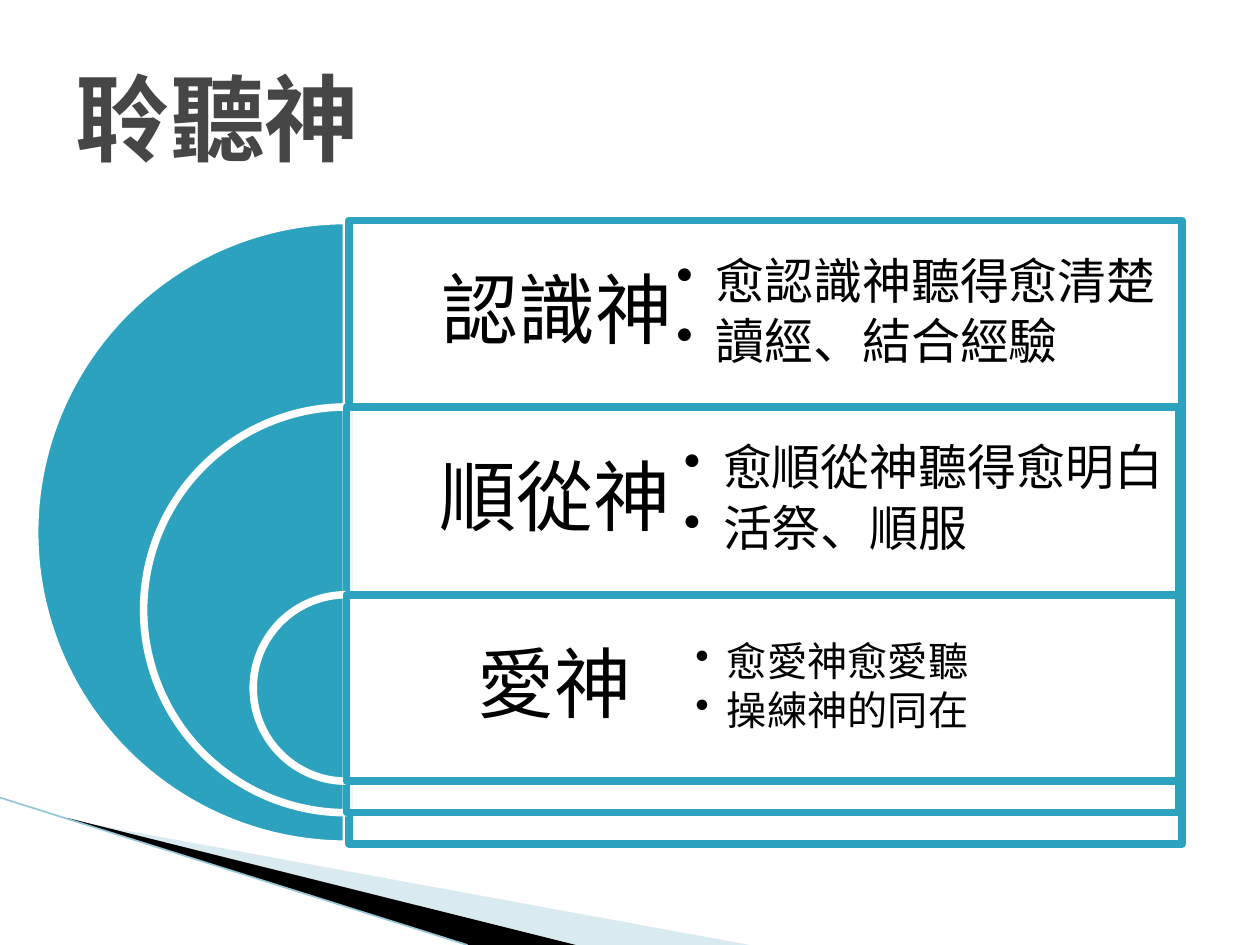
from lxml import etree
from pptx import Presentation
from pptx.dml.color import RGBColor
from pptx.enum.shapes import MSO_CONNECTOR, MSO_SHAPE
from pptx.enum.text import MSO_ANCHOR, PP_ALIGN
from pptx.oxml.ns import qn
from pptx.util import Pt

PX = 9144
FONT = "Roboto"
TEAL, WHITE, BLACK, GRAY = "2DA2BF", "FFFFFF", "000000", "464646"
PIE, RECTANGLE = MSO_SHAPE.PIE, MSO_SHAPE.RECTANGLE
STRAIGHT = MSO_CONNECTOR.STRAIGHT
MIDDLE = MSO_ANCHOR.MIDDLE
LEFT, CENTER = PP_ALIGN.LEFT, PP_ALIGN.CENTER
ROW_HEIGHT = 148
PIE_CENTER = 275

LEVELS = [
    {"box": (277, 175, 661, 495), "label": "認識神", "bullet_left": 527,
     "bullet_width": 487, "size": 28, "indent": 31,
     "bullets": ["愈認識神聽得愈清楚", "讀經、結合經驗"]},
    {"box": (275, 323, 661, 322), "label": "順從神", "bullet_left": 533,
     "bullet_width": 475, "size": 28, "indent": 31,
     "bullets": ["愈順從神聽得愈明白", "活祭、順服"]},
    {"box": (275, 472, 661, 148), "label": "愛神", "bullet_left": 542,
     "bullet_width": 458, "size": 23, "indent": 25,
     "bullets": ["愈愛神愈愛聽", "操練神的同在"]},
]


def px(*lengths):
    return [round(length * PX) for length in lengths]


def color(value):
    return RGBColor.from_string(value)


def paint(shape, fill, opacity=100, line=None, width=4.33):
    shape.shadow.inherit = False
    shape.fill.solid()
    shape.fill.fore_color.rgb = color(fill)
    if opacity < 100:
        fill_color = shape.fill._xPr.find(qn("a:solidFill"))[0]
        etree.SubElement(fill_color, qn("a:alpha"), val=str(opacity * 1000))
    if line:
        shape.line.color.rgb = color(line)
        shape.line.width = Pt(width)
    else:
        shape.line.fill.background()


def add_run(paragraph, text, size, text_color, bold=False):
    run = paragraph.add_run()
    run.text = text
    run.font.name = FONT
    run.font.size = Pt(size)
    run.font.bold = bold
    run.font.color.rgb = color(text_color)


def add_text(slide, box, lines, size, inset, space_share, alignment, indent=0):
    frame = slide.shapes.add_textbox(*px(*box)).text_frame
    frame.word_wrap = True
    frame.vertical_anchor = MIDDLE
    frame.margin_left, frame.margin_top, frame.margin_right, frame.margin_bottom = px(*[inset] * 4)
    for index, text in enumerate(lines):
        paragraph = frame.add_paragraph() if index else frame.paragraphs[0]
        if indent:
            properties = paragraph._p.get_or_add_pPr()
            hanging = indent * PX
            properties.set("marL", str(hanging))
            properties.set("indent", str(-hanging))
            etree.SubElement(properties, qn("a:buChar"), char="•")
        paragraph.alignment = alignment
        paragraph.line_spacing = 0.9
        paragraph.space_after = Pt(size * space_share)
        add_run(paragraph, text, size, BLACK)


def add_wedge(slide, points, fill, opacity=100):
    corners = [px(*point) for point in points]
    builder = slide.shapes.build_freeform(*corners[0])
    builder.add_line_segments(corners[1:])
    paint(builder.convert_to_shape(), fill, opacity)


def add_corner_decoration(slide, left, top, right, bottom):
    add_wedge(slide, [(left + 55, top + 18), (right, bottom),
                      (left + 456, bottom), (left + 55, top + 17)], "A0CBDC", 40)
    add_wedge(slide, [(left + 53, top + 16), (left + 457, bottom),
                      (left + 372, bottom), (left + 54, top + 17)], BLACK)
    edge = slide.shapes.add_connector(STRAIGHT, *px(left, top, left + 371, bottom))
    edge.line.color.rgb = color("97C5D8")
    edge.line.width = Pt(0.95)
    etree.SubElement(edge._element.spPr, qn("a:effectLst"))


def add_level(slide, level):
    left, top, width, height = level["box"]
    pie = slide.shapes.add_shape(PIE, *px(PIE_CENTER - height / 2, top, height, height))
    pie.adjustments[0] = 54
    pie.adjustments[1] = 162
    paint(pie, TEAL, line=WHITE)
    band = slide.shapes.add_shape(RECTANGLE, *px(left, top, width, height))
    paint(band, WHITE, 90, TEAL)
    add_text(slide, (left, top, width / 2, ROW_HEIGHT), [level["label"]],
             44, 18, 0.35, CENTER)
    add_text(slide, (level["bullet_left"], top, level["bullet_width"], ROW_HEIGHT),
             level["bullets"], level["size"], 10, 0.15, LEFT, level["indent"])


def add_title(slide, box, text):
    title = slide.shapes.title
    title.left, title.top, title.width, title.height = px(*box)
    title.text_frame.vertical_anchor = MIDDLE
    paragraph = title.text_frame.paragraphs[0]
    paragraph.alignment = LEFT
    add_run(paragraph, text, 54, GRAY, True)


def main():
    presentation = Presentation()
    presentation.slide_width, presentation.slide_height = px(1000, 750)
    slide = presentation.slides.add_slide(presentation.slide_layouts[5])
    add_title(slide, (50, 30, 900, 125), "聆聽神")
    add_corner_decoration(slide, 0, 633, 595, 750)
    for level in LEVELS:
        add_level(slide, level)
    presentation.save("out.pptx")


if __name__ == "__main__":
    main()
